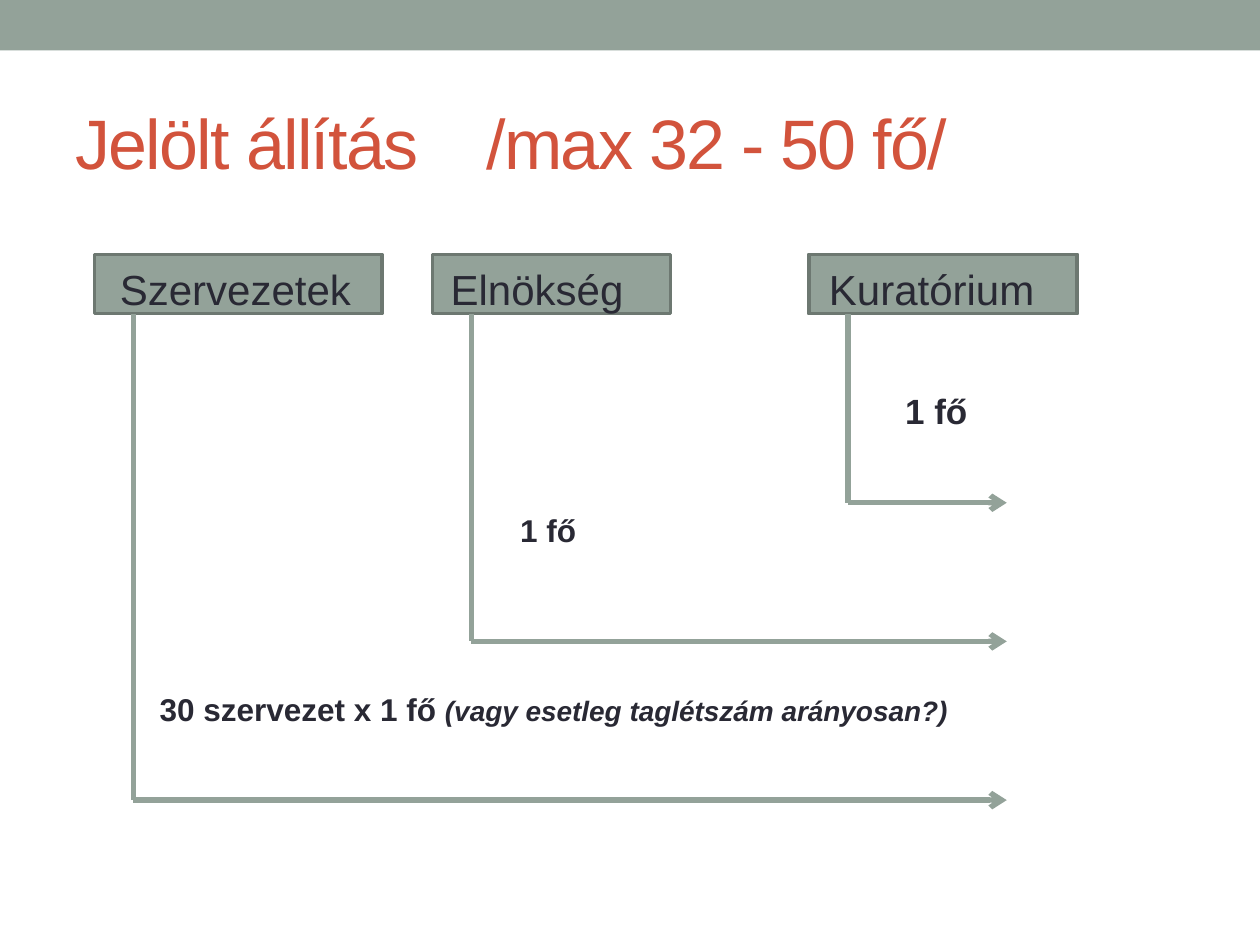
from dataclasses import dataclass

from lxml.etree import SubElement
from pptx import Presentation
from pptx.dml.color import RGBColor
from pptx.enum.shapes import MSO_CONNECTOR, MSO_SHAPE
from pptx.enum.text import MSO_ANCHOR, MSO_AUTO_SIZE, PP_ALIGN
from pptx.oxml.ns import qn
from pptx.util import Pt

COLORS = {"sage": "93A299", "border": "6D7871", "title": "D2533C", "text": "292934"}
FONT = "Arial"

BOX_TOP, BOX_HEIGHT = 145.4, 33.9
STEM_OFFSET = 22.3
ARROW_END = 575.3


@dataclass(frozen=True)
class Nominator:
    name: str
    left: float
    width: float
    text_inset: float
    arrow_y: float


@dataclass(frozen=True)
class Quota:
    text: str
    size: float
    indent: float
    space_before: float
    remark: str = ""


NOMINATORS = [
    Nominator("Szervezetek", 54, 164.2, 14.5, 457.2),
    Nominator("Elnökség", 247, 136.1, 10.5, 366.5),
    Nominator("Kuratórium", 462.2, 153.4, 11.5, 287.3),
]
QUOTAS = [
    Quota("1 fő", 20, 474, 0),
    Quota("1 fő", 18, 254, 45.5),
    Quota("30 szervezet x 1 fő ", 18, 48, 80.5, "(vagy esetleg taglétszám arányosan?)"),
]


def rgb(name: str) -> RGBColor:
    return RGBColor.from_string(COLORS[name])


def add_text(paragraph, text: str, *, size: float, color: str = "text",
             bold: bool = False, italic: bool = False, spacing: float = 0) -> None:
    run = paragraph.add_run()
    run.text = text
    font = run.font
    font.name, font.size, font.bold, font.italic = FONT, Pt(size), bold, italic
    font.color.rgb = rgb(color)
    if spacing:
        font._element.set("spc", str(round(spacing * 100)))


def place(shape, left: float, top: float, width: float, height: float) -> None:
    shape.left, shape.top = Pt(left), Pt(top)
    shape.width, shape.height = Pt(width), Pt(height)


def add_rectangle(slide, left: float, top: float, width: float, height: float):
    shape = slide.shapes.add_shape(
        MSO_SHAPE.RECTANGLE, Pt(left), Pt(top), Pt(width), Pt(height))
    shape.shadow.inherit = False
    shape.fill.solid()
    shape.fill.fore_color.rgb = rgb("sage")
    shape.line.fill.background()
    return shape


def add_line(slide, start: tuple[float, float], end: tuple[float, float],
             arrow: bool = False) -> None:
    connector = slide.shapes.add_connector(
        MSO_CONNECTOR.STRAIGHT, *(Pt(value) for value in start + end))
    connector.line.color.rgb = rgb("sage")
    connector.line.width = Pt(3)
    if arrow:
        SubElement(connector.line._get_or_add_ln(), qn("a:tailEnd"), type="arrow")
    SubElement(connector._element.spPr, qn("a:effectLst"))


def fill_title(title) -> None:
    place(title, 36, 41.8, 648, 77.8)
    title.text_frame.auto_size = MSO_AUTO_SIZE.NONE
    title.text_frame.vertical_anchor = MSO_ANCHOR.MIDDLE
    paragraph = title.text_frame.paragraphs[0]
    paragraph.alignment = PP_ALIGN.LEFT
    add_text(paragraph, "Jelölt állítás\t/max 32 - 50 fő/", size=40, color="title", spacing=-1)
    tab_list = SubElement(paragraph._p.get_or_add_pPr(), qn("a:tabLst"))
    SubElement(tab_list, qn("a:tab"), pos=str(Pt(235)), algn="l")


def fill_quotas(body) -> None:
    place(body, 36, 219, 648, 263.4)
    frame = body.text_frame
    frame.auto_size = MSO_AUTO_SIZE.NONE
    for index, quota in enumerate(QUOTAS):
        paragraph = frame.add_paragraph() if index else frame.paragraphs[0]
        paragraph.space_before = Pt(quota.space_before)
        properties = paragraph._p.get_or_add_pPr()
        properties.set("marL", str(Pt(quota.indent)))
        properties.set("indent", "0")
        SubElement(properties, qn("a:buNone"))
        add_text(paragraph, quota.text, size=quota.size, bold=True)
        if quota.remark:
            add_text(paragraph, quota.remark, size=16, bold=True, italic=True)


def add_nominator_box(slide, nominator: Nominator) -> None:
    box = add_rectangle(slide, nominator.left, BOX_TOP, nominator.width, BOX_HEIGHT)
    box.line.color.rgb = rgb("border")
    box.line.width = Pt(2)
    frame = box.text_frame
    frame.vertical_anchor = MSO_ANCHOR.TOP
    frame.margin_left, frame.margin_top = Pt(nominator.text_inset), Pt(5.4)
    frame.margin_right = frame.margin_bottom = 0
    paragraph = frame.paragraphs[0]
    paragraph.alignment = PP_ALIGN.LEFT
    add_text(paragraph, nominator.name, size=24)


def add_nominator_arrow(slide, nominator: Nominator) -> None:
    """Draw the stem down from the box and the arrow to the right."""
    stem_x = nominator.left + STEM_OFFSET
    corner = (stem_x, nominator.arrow_y)
    add_line(slide, (stem_x, BOX_TOP + BOX_HEIGHT), corner)
    add_line(slide, corner, (ARROW_END, nominator.arrow_y), arrow=True)


def main() -> None:
    presentation = Presentation()
    presentation.slide_width, presentation.slide_height = Pt(720), Pt(540)
    slide = presentation.slides.add_slide(presentation.slide_layouts[1])
    add_rectangle(slide, 0, 0, 720, 28.8)
    fill_title(slide.shapes.title)
    fill_quotas(slide.placeholders[1])
    for nominator in NOMINATORS:
        add_nominator_box(slide, nominator)
        add_nominator_arrow(slide, nominator)
    presentation.save("out.pptx")


if __name__ == "__main__":
    main()
